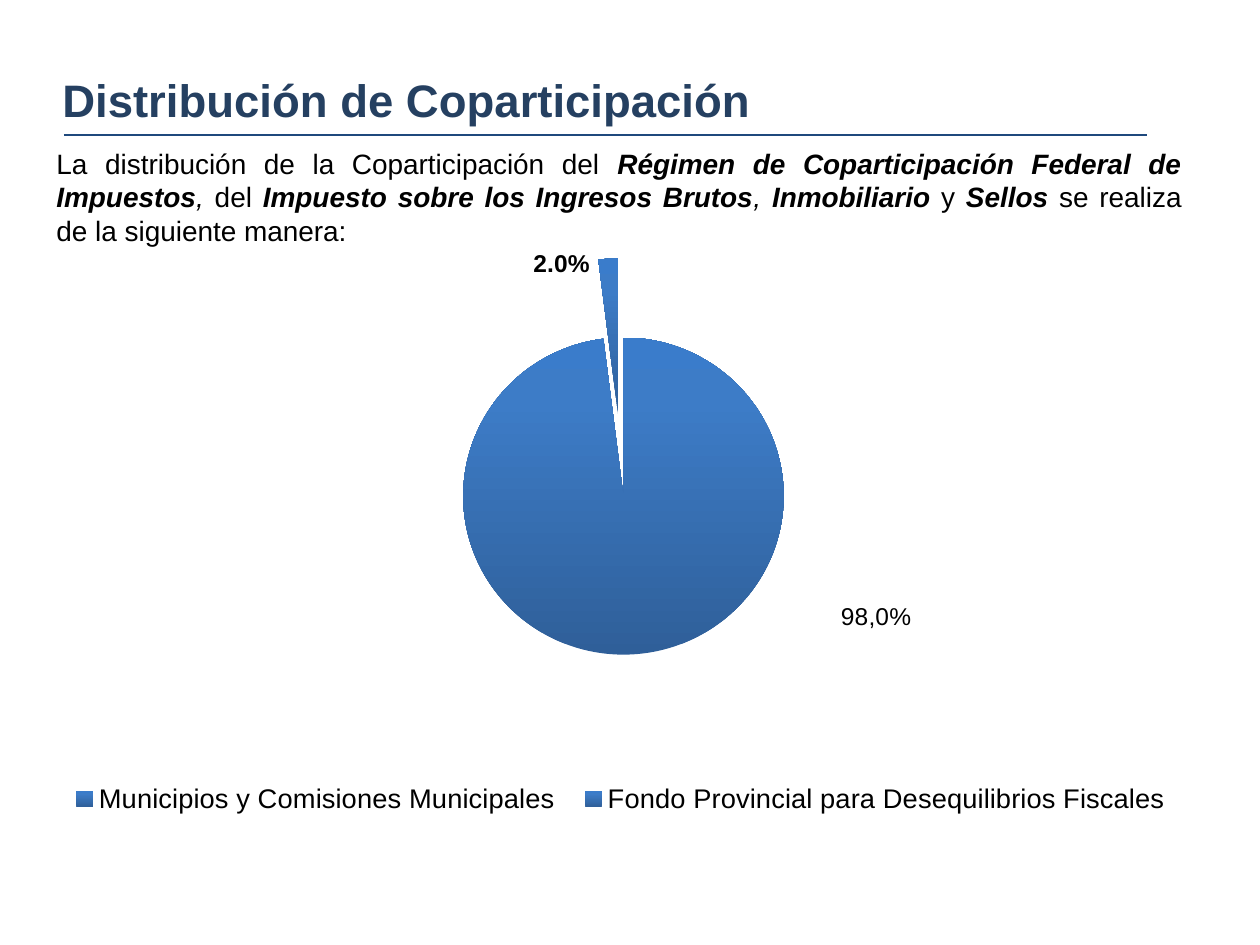
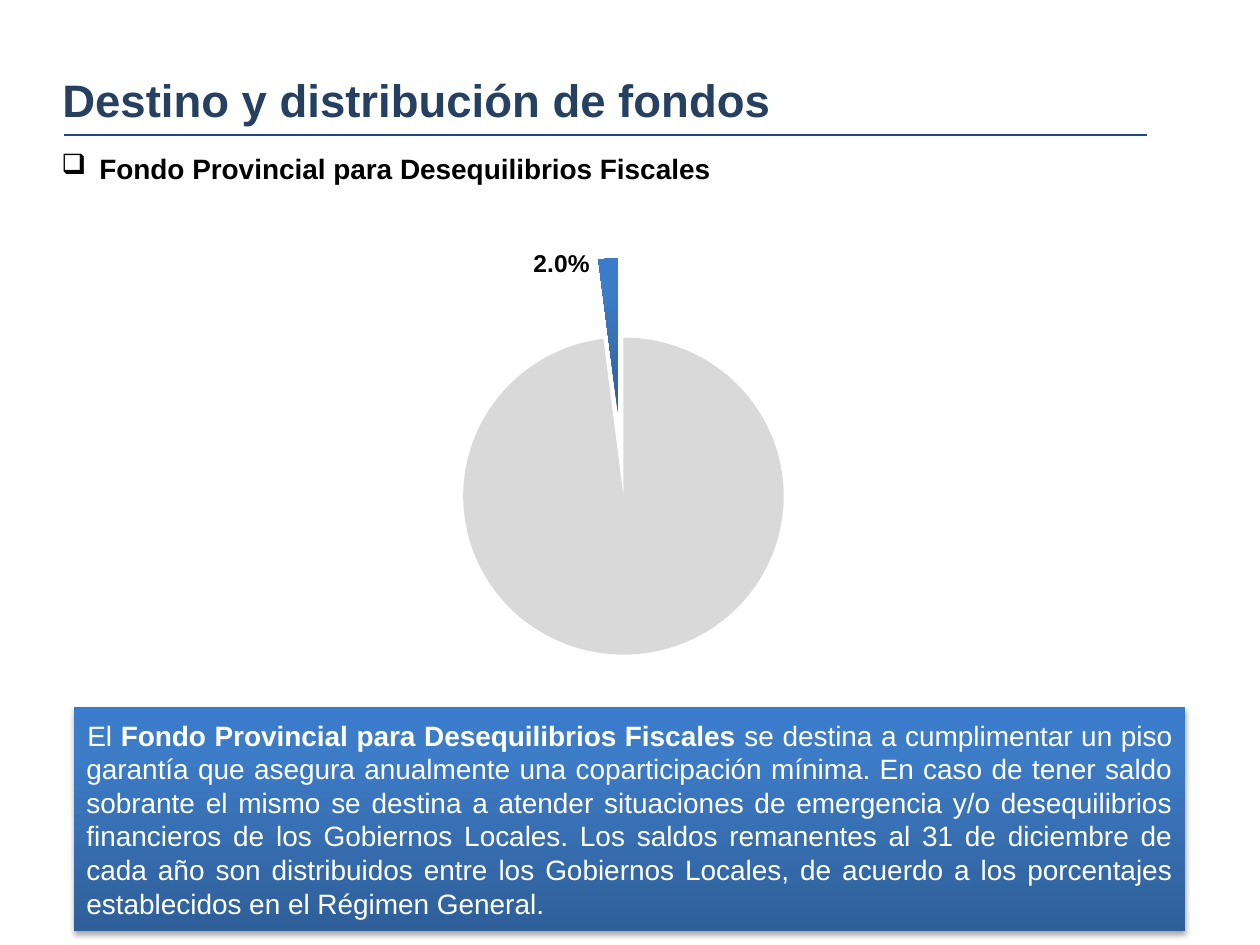
from lxml import etree
from copy import deepcopy
from pptx import Presentation
from pptx.chart.data import CategoryChartData
from pptx.dml.color import RGBColor
from pptx.enum.chart import XL_CHART_TYPE, XL_LABEL_POSITION, XL_LEGEND_POSITION
from pptx.enum.shapes import MSO_CONNECTOR, MSO_SHAPE
from pptx.enum.text import MSO_ANCHOR, PP_ALIGN
from pptx.oxml.ns import qn
from pptx.util import Pt

PIE = XL_CHART_TYPE.PIE
OUTSIDE = XL_LABEL_POSITION.OUTSIDE_END
LEGEND_BOTTOM = XL_LEGEND_POSITION.BOTTOM
STRAIGHT = MSO_CONNECTOR.STRAIGHT
RECTANGLE = MSO_SHAPE.RECTANGLE
MIDDLE = MSO_ANCHOR.MIDDLE
JUSTIFY = PP_ALIGN.JUSTIFY

EMU_PER_PX = 914400 / 126
FONT = "Arial"
BLACK, WHITE, GREY = "000000", "FFFFFF", "D9D9D9"
TITLE_COLOR, RULE_COLOR = "254061", "1F497D"
BLUE_STOPS = [(0, "2F5F99"), (0.8, "3D7CC7"), (1, "3A7CCB")]
PLAIN, BOLD, ITALIC = {}, {"bold": True}, {"italic": True}
BOLD_ITALIC = {"bold": True, "italic": True}
FUND = "Fondo Provincial para Desequilibrios Fiscales"
SHARES = (0.98, 0.02)


def px(length):
    return round(length * EMU_PER_PX)


def rgb(value):
    return RGBColor.from_string(value)


def style_font(font, size, color=BLACK, bold=False, italic=False):
    font.name, font.size = FONT, Pt(size)
    font.bold, font.italic = bold, italic
    font.color.rgb = rgb(color)


def write(frame, spans, size=16, color=BLACK, align=None, margin=0, indent=0, bullet=None):
    """Fill a text frame with one paragraph of (text, style) spans."""
    frame.word_wrap = True
    para = frame.paragraphs[0]
    para.alignment = align
    properties = para._p.get_or_add_pPr()
    properties.set("marL", str(px(margin)))
    properties.set("indent", str(px(indent)))
    if bullet:
        etree.SubElement(properties, qn("a:buChar"), char=bullet)
    for text, style in spans:
        span = para.add_run()
        span.text = text
        style_font(span.font, size, color, **style)


def add_text(page, box, spans, **text_format):
    shape = page.shapes.add_textbox(*map(px, box))
    write(shape.text_frame, spans, **text_format)


def add_title(page, title):
    rule = page.shapes.add_connector(STRAIGHT, px(64), px(135), px(1147), px(135))
    rule.line.color.rgb = rgb(RULE_COLOR)
    rule.line.width = Pt(1.5)
    etree.SubElement(rule._element.spPr, qn("a:effectLst"))
    add_text(page, (50, 66, 1111, 68), [(title, BOLD)], size=26, color=TITLE_COLOR)


def fill_blue(fill, owner):
    """Give the newest fill inside owner the vertical blue gradient."""
    fill.gradient()
    fill.gradient_angle = 90
    stop_list = list(owner.iter(qn("a:gsLst")))[-1]
    stop_list.append(deepcopy(stop_list[0]))
    for stop, (position, color) in zip(fill.gradient_stops, BLUE_STOPS):
        stop.position = position
        stop.color.rgb = rgb(color)


def add_shadow(shape):
    shape.shadow.inherit = False
    effects = shape._element.spPr.find(qn("a:effectLst"))
    shadow = etree.SubElement(effects, qn("a:outerShdw"), blurRad=str(Pt(3.1)),
                              dist=str(Pt(1.8)), dir="5400000", rotWithShape="0")
    color = etree.SubElement(shadow, qn("a:srgbClr"), val=BLACK)
    etree.SubElement(color, qn("a:alpha"), val="35000")


def add_blue_panel(page, box, spans, **text_format):
    panel = page.shapes.add_shape(RECTANGLE, *map(px, box))
    fill_blue(panel.fill, panel._element)
    panel.line.fill.background()
    add_shadow(panel)
    panel.text_frame.vertical_anchor = MIDDLE
    write(panel.text_frame, spans, color=WHITE, **text_format)


def manual_layout(**values):
    layout = etree.Element(qn("c:layout"))
    manual = etree.SubElement(layout, qn("c:manualLayout"))
    for name, value in values.items():
        etree.SubElement(manual, qn("c:" + name), val=str(value))
    return layout


def place_label(point, x, y, text=None, bold=False):
    """Label a slice, moved by x and y as shares of the chart size."""
    label = point.data_label
    if text:
        label.text_frame.text = text
        style_font(label.text_frame.paragraphs[0].runs[0].font, 14, bold=bold)
    else:
        style_font(label.font, 14, bold=bold)
    label.position = OUTSIDE
    label._get_or_add_dLbl().insert(1, manual_layout(x=x, y=y))


def add_legend(chart):
    chart.has_legend = True
    legend = chart.legend
    legend.position = LEGEND_BOTTOM
    legend.include_in_layout = False
    style_font(legend.font, 15.6)
    legend._element.find(qn("c:legendPos")).addnext(manual_layout(
        xMode="edge", yMode="edge", x=0.01, y=0.83, w=0.98, h=0.08))


def add_share_pie(page, categories, main_color=None):
    """Draw the exploded pie; a main_color mutes the large slice."""
    data = CategoryChartData(number_format="0.0%")
    data.categories = categories
    data.add_series("Series 1", SHARES)
    chart = page.shapes.add_chart(PIE, *map(px, (44, 224, 1154, 660)), data).chart
    chart.has_title = chart.has_legend = False
    style_font(chart.font, 17.6)

    plot_area = chart._chartSpace.chart.plotArea
    for layout in plot_area.findall(qn("c:layout")):
        plot_area.remove(layout)
    plot_area.insert(0, manual_layout(layoutTarget="inner", xMode="edge", yMode="edge",
                                      x=0, y=0.042, w=1, h=0.607))
    series = chart.plots[0].series[0]
    explosion = etree.Element(qn("c:explosion"), val="25")
    series.format.line.fill.background()
    series._element.find(qn("c:spPr")).addnext(explosion)

    for index in range(len(SHARES)):
        slice_format = series.points[index].format
        if main_color and index == 0:
            slice_format.fill.solid()
            slice_format.fill.fore_color.rgb = rgb(main_color)
        else:
            fill_blue(slice_format.fill, chart._chartSpace)
        slice_format.line.fill.background()
    for point in series._element.findall(qn("c:dPt")):
        point.find(qn("c:spPr")).addprevious(deepcopy(explosion))

    labels = series.data_labels
    labels.show_value = False
    labels.number_format = "0.0%"
    labels.number_format_is_linked = False
    for leader in labels._element.findall(qn("c:showLeaderLines")):
        leader.set("val", "0")
    if not main_color:
        place_label(series.points[0], 0.21, -0.09, text="98,0%")
    place_label(series.points[1], -0.04, 0.04, bold=True)
    return chart


def add_distribution_page(page):
    chart = add_share_pie(page, ["Municipios y Comisiones Municipales", FUND])
    add_legend(chart)
    add_title(page, "Distribución de Coparticipación")
    add_text(page, (44, 140, 1150, 115), [
        ("La distribución de la Coparticipación del ", PLAIN),
        ("Régimen de Coparticipación Federal de Impuestos", BOLD_ITALIC),
        (", ", ITALIC),
        ("del ", PLAIN),
        ("Impuesto sobre los Ingresos Brutos", BOLD_ITALIC),
        (", ", ITALIC),
        ("Inmobiliario ", BOLD_ITALIC),
        ("y ", PLAIN),
        ("Sellos ", BOLD_ITALIC),
        ("se realiza de la siguiente manera:", PLAIN),
    ], align=JUSTIFY)


def add_fund_page(page):
    add_title(page, "Destino y distribución de fondos")
    add_blue_panel(page, (74, 707, 1111, 224), [
        ("El ", PLAIN),
        (FUND, BOLD),
        (" se destina a cumplimentar un piso garantía que asegura anualmente una "
         "coparticipación mínima. En caso de tener saldo sobrante el mismo se destina a "
         "atender situaciones de emergencia y/o desequilibrios financieros de los "
         "Gobiernos Locales. Los saldos remanentes al 31 de diciembre de cada año son "
         "distribuidos entre los Gobiernos Locales, de acuerdo a los porcentajes "
         "establecidos en el Régimen General.", PLAIN),
    ], align=JUSTIFY, indent=1)
    add_text(page, (49, 145, 1097, 47), [(FUND, BOLD)], margin=38, indent=-38, bullet="❑")
    add_share_pie(page, ["1", "2"], main_color=GREY)


def main():
    deck = Presentation()
    deck.slide_width, deck.slide_height = px(1260), px(945)
    blank = deck.slide_layouts[6]
    for fill_page in (add_distribution_page, add_fund_page):
        fill_page(deck.slides.add_slide(blank))
    deck.save("out.pptx")


if __name__ == "__main__":
    main()
